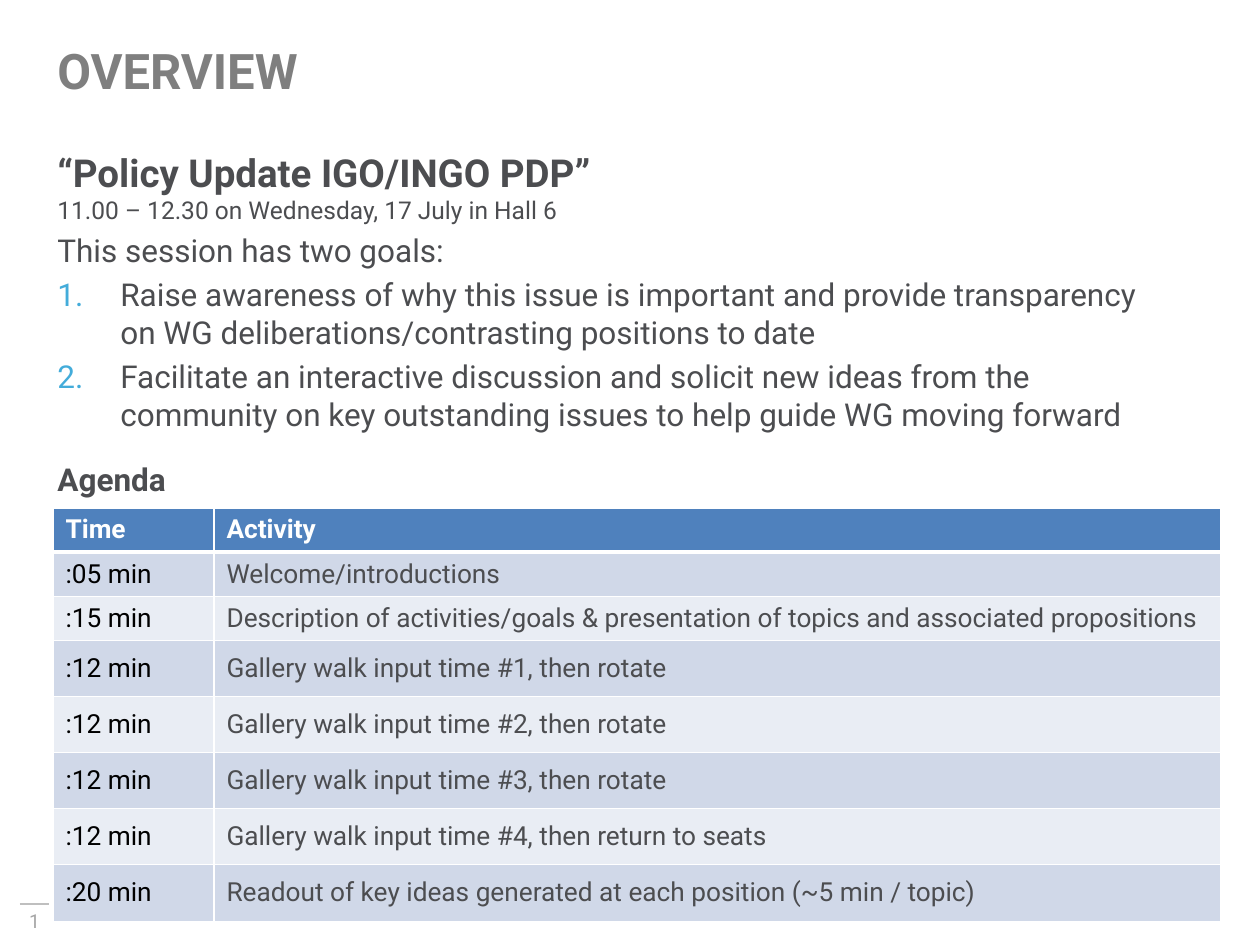
from lxml.etree import SubElement
from pptx import Presentation
from pptx.dml.color import RGBColor as RGB
from pptx.enum.shapes import MSO_CONNECTOR as CONN
from pptx.enum.text import MSO_ANCHOR as ANCHOR, PP_ALIGN as ALIGN
from pptx.oxml.ns import qn
from pptx.util import Pt

SCALE = 914400 / 126
FONT = "Roboto"
COLORS = {
    "text": "4C4D50", "title": "7F7F7F", "number": "A6A6A6", "rule": "BFBFBF",
    "bullet": "43ACDA", "header": "4F81BD", "odd": "D0D8E8", "even": "E9EDF4",
    "white": "FFFFFF", "black": "000000",
}
GOALS = [
    "Raise awareness of why this issue is important and provide transparency "
    "on WG deliberations/contrasting positions to date",
    "Facilitate an interactive discussion and solicit new ideas from the "
    "community on key outstanding issues to help guide WG moving forward",
]
AGENDA = [
    ("Time", "Activity"),
    (":05 min", "Welcome/introductions"),
    (":15 min", "Description of activities/goals & presentation of topics "
                "and associated propositions"),
    (":12 min", "Gallery walk input time #1, then rotate"),
    (":12 min", "Gallery walk input time #2, then rotate"),
    (":12 min", "Gallery walk input time #3, then rotate"),
    (":12 min", "Gallery walk input time #4, then return to seats"),
    (":20 min", "Readout of key ideas generated at each position (~5 min / topic)"),
]
COL_WIDTHS = [161, 1007]
ROW_HEIGHTS = [44] * 3 + [56] * 4 + [57]


def px(n):
    return round(n * SCALE)


def color(name):
    return RGB.from_string(COLORS[name])


def add_run(p, text, size, fill="text", bold=False):
    r = p.add_run()
    r.text = text
    for key, value in {"name": FONT, "size": Pt(size), "bold": bold}.items():
        setattr(r.font, key, value)
    r.font.color.rgb = color(fill)


def add_box(s, x, y, w, h, anchor=ANCHOR.TOP):
    tf = s.shapes.add_textbox(px(x), px(y), px(w), px(h)).text_frame
    tf.word_wrap = True
    tf.vertical_anchor = anchor
    return tf


def add_label(s, box, text, size, fill, bold=True, anchor=ANCHOR.TOP, **para):
    p = add_box(s, *box, anchor=anchor).paragraphs[0]
    for key, value in para.items():
        setattr(p, key, value)
    add_run(p, text, size, fill, bold)


def number_paragraph(p, indent):
    pPr = p._p.get_or_add_pPr()
    pPr.set("marL", str(px(indent)))
    pPr.set("indent", str(-px(indent)))
    clr = SubElement(pPr, qn("a:buClr"))
    SubElement(clr, qn("a:srgbClr"), val=COLORS["bullet"])
    SubElement(pPr, qn("a:buFont"), typeface=FONT)
    SubElement(pPr, qn("a:buAutoNum"), type="arabicPeriod")


def add_session(s):
    tf = add_box(s, 45, 143, 1144, 315)
    p = tf.paragraphs[0]
    add_run(p, "“Policy Update IGO/INGO PDP”", 22, bold=True)
    p.add_line_break()
    add_run(p, "11.00 – 12.30 on Wednesday, 17 July in Hall 6", 14)
    for i, text in enumerate(["This session has two goals:", *GOALS]):
        p = tf.add_paragraph()
        p.space_before = Pt(3.6)
        if i:
            number_paragraph(p, 63)
        add_run(p, text, 18)


def add_borders(cell, bottom, top):
    tcPr = cell._tc.get_or_add_tcPr()
    widths = {"a:lnL": 1, "a:lnR": 1, "a:lnT": top, "a:lnB": bottom}
    for i, (tag, width) in enumerate(widths.items()):
        ln = tcPr.makeelement(qn(tag), {"w": str(Pt(width))})
        fill = SubElement(ln, qn("a:solidFill"))
        SubElement(fill, qn("a:srgbClr"), val=COLORS["white"])
        tcPr.insert(i, ln)


def add_agenda(s, x, y):
    frame = s.shapes.add_table(len(AGENDA), len(COL_WIDTHS), px(x), px(y),
                               px(sum(COL_WIDTHS)), px(sum(ROW_HEIGHTS)))
    table = frame.table
    for col, width in zip(table.columns, COL_WIDTHS):
        col.width = px(width)
    for i, (row, height, texts) in enumerate(zip(table.rows, ROW_HEIGHTS, AGENDA)):
        row.height = px(height)
        band = "header" if i == 0 else "odd" if i % 2 else "even"
        for cell, text, ink in zip(row.cells, texts, ("black", "text")):
            cell.fill.solid()
            cell.fill.fore_color.rgb = color(band)
            cell.vertical_anchor = ANCHOR.MIDDLE if i else ANCHOR.TOP
            add_run(cell.text_frame.paragraphs[0], text, 15,
                    ink if i else "white", i == 0)
            add_borders(cell, bottom=1 if i else 3, top=3 if i == 1 else 1)


def add_rule(s, x1, x2, y):
    line = s.shapes.add_connector(CONN.STRAIGHT, px(x1), px(y), px(x2), px(y))
    line.line.color.rgb = color("rule")
    line.line.width = Pt(0.75)
    SubElement(line._element.spPr, qn("a:effectLst"))


def main():
    prs = Presentation()
    prs.slide_width, prs.slide_height = px(1260), px(945)
    s = prs.slides.add_slide(prs.slide_layouts[6])
    add_rule(s, 20, 49, 904)
    add_label(s, (5, 903, 59, 37), "1", 11, "number", bold=False,
              alignment=ALIGN.CENTER)
    add_session(s)
    add_label(s, (45, 45, 824, 60), "OVERVIEW", 28, "title",
              anchor=ANCHOR.MIDDLE, line_spacing=0.8)
    add_agenda(s, 53, 508)
    add_label(s, (45, 454, 168, 62), "Agenda", 18, "text")
    prs.save("out.pptx")


if __name__ == "__main__":
    main()
